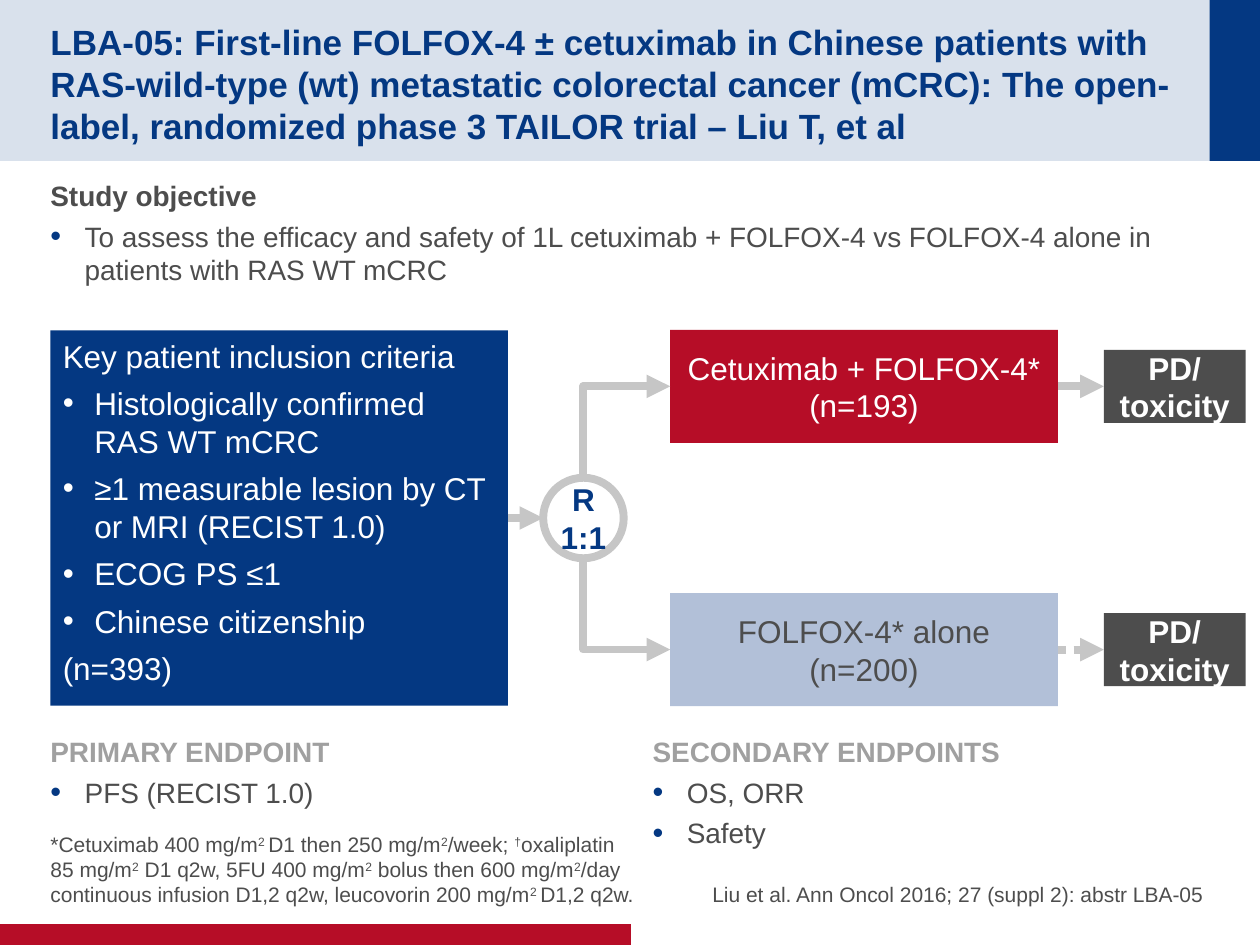
from lxml import etree
from pptx import Presentation
from pptx.dml.color import RGBColor
from pptx.enum.dml import MSO_LINE
from pptx.enum.shapes import MSO_CONNECTOR as Link, MSO_SHAPE as Preset
from pptx.enum.text import MSO_ANCHOR as Anchor, MSO_AUTO_SIZE as Fit, PP_ALIGN as Align
from pptx.oxml.ns import qn
from pptx.util import Pt

NAVY = RGBColor(0x04, 0x38, 0x82)
PALE_NAVY = RGBColor(0xD9, 0xE1, 0xEC)
RED = RGBColor(0xB6, 0x0D, 0x27)
STEEL = RGBColor(0xB2, 0xC0, 0xD8)
CHARCOAL = RGBColor(0x4D, 0x4D, 0x4D)
GREY = RGBColor(0xA0, 0xA0, 0xA0)
SILVER = RGBColor(0xC6, 0xC6, 0xC6)
WHITE = RGBColor(0xFF, 0xFF, 0xFF)

LEFT = 28.8
MIDDLE = 296      # height of the randomisation node
ARM_OFFSET = 75.2  # from the node to the middle of each arm


class TrialSlide:
    """Holds the slide and the style of its elements."""

    font = "Arial"
    line_width = 4.5

    def __init__(self, slide):
        self.slide = slide
        self.shapes = slide.shapes

    def place(self, shape, left, top, width, height):
        shape.left, shape.top = Pt(left), Pt(top)
        shape.width, shape.height = Pt(width), Pt(height)

    def frame(self, shape, insets, anchor=Anchor.TOP, wrap=True):
        """Set insets (left, top, right, bottom) and anchoring, and return the text frame."""
        frame = shape.text_frame
        frame.auto_size, frame.word_wrap = Fit.NONE, wrap
        frame.vertical_anchor = anchor
        frame.margin_left, frame.margin_top, frame.margin_right, frame.margin_bottom = map(Pt, insets)
        return frame

    def style(self, paragraph, size, color, bold=False, align=Align.LEFT, after=0):
        paragraph.alignment = align
        paragraph.space_before, paragraph.space_after = Pt(0), Pt(after)
        for run in paragraph.runs:
            run.font.name, run.font.size = self.font, Pt(size)
            run.font.bold, run.font.color.rgb = bold, color

    def bullet(self, paragraph, indent, color=None, percent=100):
        """Give a bullet with a hanging indent, or neither when indent is 0."""
        props = paragraph._p.get_or_add_pPr()
        props.set("marL", str(Pt(indent)))
        props.set("indent", str(-Pt(indent)))
        if not indent:
            etree.SubElement(props, qn("a:buNone"))
            return
        if color is not None:
            fill = etree.SubElement(props, qn("a:buClr"))
            etree.SubElement(fill, qn("a:srgbClr"), val=str(color))
        etree.SubElement(props, qn("a:buSzPct"), val=str(percent * 1000))
        etree.SubElement(props, qn("a:buFont"), typeface=self.font)
        etree.SubElement(props, qn("a:buChar"), char="•")

    def block(self, shape, box, insets, heading, items, heading_color):
        """Fill a text shape with a bold heading and a bulleted list."""
        self.place(shape, *box)
        frame = self.frame(shape, insets)
        frame.text = "\n".join([heading, *items])
        for number, paragraph in enumerate(frame.paragraphs):
            is_heading = number == 0
            self.style(paragraph, 16, heading_color if is_heading else CHARCOAL, is_heading, after=4)
            self.bullet(paragraph, 0 if is_heading else 19.6, NAVY, 110)

    def textbox(self):
        return self.shapes.add_textbox(0, 0, 0, 0)

    def title(self, text):
        heading = self.shapes.title
        self.place(heading, LEFT, 14.4, 648.7, 63.4)
        frame = self.frame(heading, (0, 3.6, 0, 0), Anchor.MIDDLE)
        frame.text = text
        self.style(frame.paragraphs[0], 20, NAVY, True)

    def note(self, text, left, width, align=Align.LEFT):
        """Write a bottom note; ^ switches superscript on and off, \\v breaks the line."""
        note = self.textbox()
        self.place(note, left, 480.2, width, 38.2)
        paragraph = self.frame(note, (0, 0, 0, 0), Anchor.BOTTOM).paragraphs[0]
        for number, piece in enumerate(text.split("^")):
            for row, line in enumerate(piece.split("\v")):
                if row:
                    paragraph.add_line_break()
                run = paragraph.add_run()
                run.text = line
                if number % 2:
                    run.font._element.set("baseline", "30000")
        self.style(paragraph, 12, CHARCOAL, align=align, after=4)

    def box(self, left, top, width, height, fill, preset=Preset.RECTANGLE):
        shape = self.shapes.add_shape(preset, Pt(left), Pt(top), Pt(width), Pt(height))
        shape.shadow.inherit = False
        shape.line.fill.background()
        if fill is None:
            shape.fill.background()
        else:
            shape.fill.solid()
            shape.fill.fore_color.rgb = fill
        return shape

    def band(self, left, top, width, height, fill):
        """Draw a decorative band behind the placeholders."""
        band = self.box(left, top, width, height, fill)
        self.shapes._spTree.insert(2, band._element)

    def label(self, shape, text, color, bold=False, inset=7.2, wrap=True):
        frame = self.frame(shape, (inset, 0, inset, 0), Anchor.MIDDLE, wrap)
        frame.text = text
        for paragraph in frame.paragraphs:
            self.style(paragraph, 18, color, bold, Align.CENTER)

    def card(self, left, middle, width, height, fill, text, color, bold=False):
        card = self.box(left, middle - height / 2, width, height, fill)
        self.label(card, text, color, bold)
        return card

    def connector(self, kind, arrow_end):
        connector = self.shapes.add_connector(kind, 0, 0, 0, 0)
        connector.line.color.rgb = SILVER
        connector.line.width = Pt(self.line_width)
        etree.SubElement(connector.line._get_or_add_ln(), qn(arrow_end), type="triangle")
        etree.SubElement(connector._element.spPr, qn("a:effectLst"))
        return connector

    def arrow(self, source, source_side, target, target_side):
        arrow = self.connector(Link.STRAIGHT, "a:tailEnd")
        arrow.begin_connect(source, source_side)
        arrow.end_connect(target, target_side)
        return arrow

    def branch(self, node, node_side, arm):
        """Run a one-bend arrow from the round node to the left side of an arm."""
        branch = self.connector(Link.ELBOW, "a:headEnd")
        branch.begin_connect(arm, 1)
        branch.end_connect(node, node_side)
        branch._element.spPr.find(qn("a:prstGeom")).set("prst", "bentConnector2")
        # An ellipse has eight sites, two for each quarter turn.
        branch._element.find(".//" + qn("a:endCxn")).set("idx", str(node_side * 2))


def main():
    deck = Presentation()
    deck.slide_width, deck.slide_height = Pt(720), Pt(540)
    page = TrialSlide(deck.slides.add_slide(deck.slide_layouts[1]))

    page.band(691.2, 0, 28.8, 92, NAVY)
    page.band(0, 0, 720, 92, PALE_NAVY)
    page.band(0, 528, 360.6, 12, RED)

    page.title("LBA-05: First-line FOLFOX-4 ± cetuximab in Chinese patients with RAS-wild-type (wt) "
               "metastatic colorectal cancer (mCRC): The open-label, randomized phase 3 TAILOR trial "
               "– Liu T, et al")
    page.block(page.slide.placeholders[1], (LEFT, 98.6, 662.4, 373.7), (0, 3.6, 0, 3.6), "Study objective",
               ["To assess the efficacy and safety of 1L cetuximab + FOLFOX-4 vs FOLFOX-4 alone "
                "in patients with RAS WT mCRC"], CHARCOAL)

    criteria = page.box(LEFT, MIDDLE - 107.2, 261.4, 214.4, NAVY)
    criteria_frame = page.frame(criteria, (7.2, 3.6, 7.2, 3.6))
    criteria_frame.text = "\n".join([
        "Key patient inclusion criteria", "Histologically confirmed RAS WT mCRC",
        "≥1 measurable lesion by CT or MRI (RECIST 1.0)", "ECOG PS ≤1", "Chinese citizenship", "(n=393)"])
    for paragraph in criteria_frame.paragraphs:
        page.style(paragraph, 18, WHITE, after=5.5)
    for criterion in criteria_frame.paragraphs[1:-1]:
        page.bullet(criterion, 18)

    node = page.box(310.4, MIDDLE - 23, 46, 46, None, Preset.OVAL)
    node.line.color.rgb, node.line.width = SILVER, Pt(page.line_width)
    page.label(node, "R\n1:1", NAVY, True, wrap=False)
    page.arrow(criteria, 3, node, 1)._element.find(".//" + qn("a:endCxn")).set("idx", "2")

    arms = [("Cetuximab + FOLFOX-4* (n=193)", RED, WHITE, -ARM_OFFSET, 0, None),
            ("FOLFOX-4* alone\n(n=200)", STEEL, CHARCOAL, ARM_OFFSET, 2, MSO_LINE.ROUND_DOT)]
    for text, fill, color, offset, node_side, dash in arms:
        arm = page.card(383, MIDDLE + offset, 221.5, 64.6, fill, text, color)
        outcome = page.card(630.8, MIDDLE + offset, 81, 41.8, CHARCOAL, "PD/\vtoxicity", WHITE, True)
        page.branch(node, node_side, arm)
        progression = page.arrow(arm, 3, outcome, 1)
        if dash:
            progression.line.dash_style = dash

    page.block(page.textbox(), (LEFT, 416.2, 325.4, 48.2), (0, 3.6, 0, 3.6),
               "PRIMARY ENDPOINT", ["PFS (RECIST 1.0)"], GREY)
    page.block(page.textbox(), (365.8, 416.2, 325.4, 59.8), (7.2, 3.6, 7.2, 3.6),
               "SECONDARY ENDPOINTS", ["OS, ORR", "Safety"], GREY)
    page.note("*Cetuximab 400 mg/m^2 ^D1 then 250 mg/m^2^/week; ^†^oxaliplatin \v85 mg/m^2^ D1 q2w, "
              "5FU 400 mg/m^2^ bolus then 600 mg/m^2^/day continuous infusion D1,2 q2w, "
              "leucovorin 200 mg/m^2 ^D1,2 q2w.", LEFT, 354.2)
    page.note("Liu et al. Ann Oncol 2016; 27 (suppl 2): abstr LBA-05 ", 365.8, 325.4, Align.RIGHT)

    deck.save("out.pptx")


if __name__ == "__main__":
    main()
